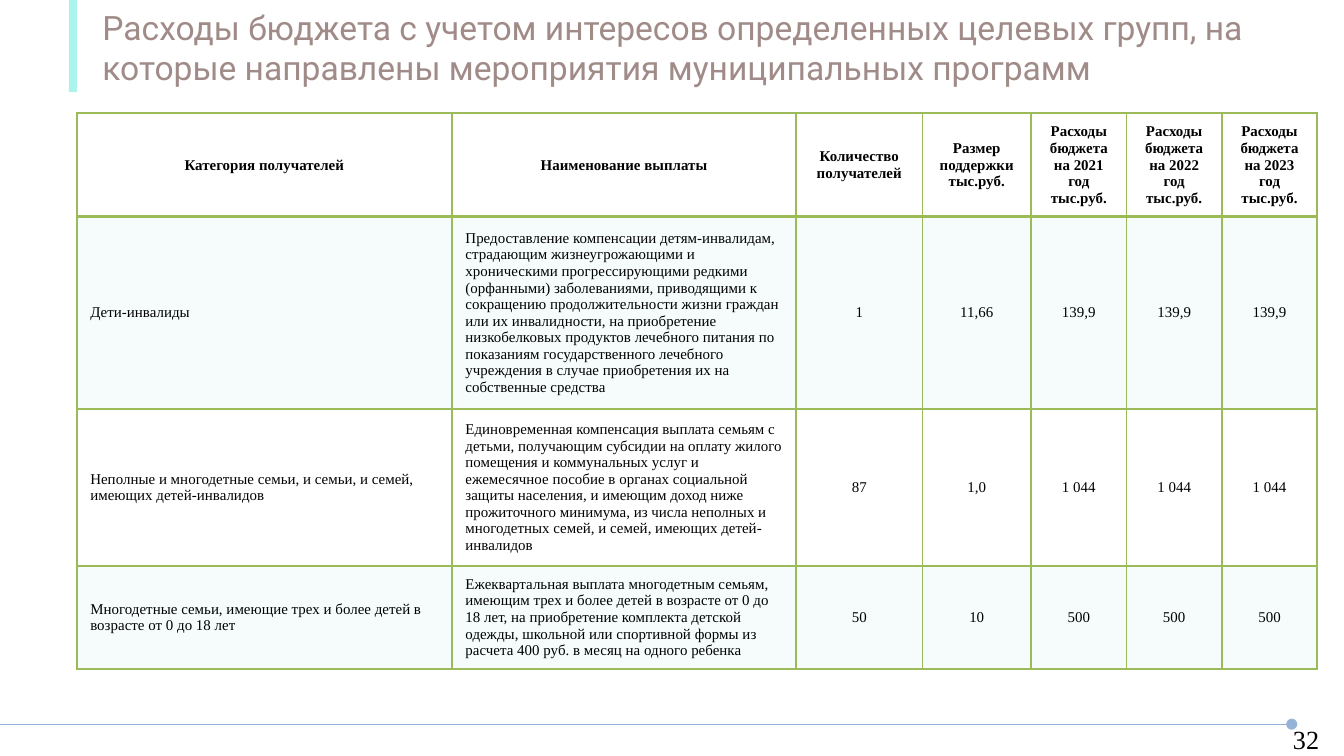
import pptx
import pptx.dml.color
import pptx.enum.shapes
import pptx.enum.text
import pptx.oxml
import pptx.oxml.ns
import pptx.util
from dataclasses import dataclass

Pt = pptx.util.Pt
Align = pptx.enum.text.PP_ALIGN
Anchor = pptx.enum.text.MSO_ANCHOR


@dataclass
class Theme:
    ink: str = "000000"
    title: str = "A08B88"
    accent: str = "ACF3EB"
    grid: str = "9BBB59"
    band: str = "D4F4F2"
    rule: str = "95B3D7"
    head_font: str = "Roboto"
    body_font: str = "Times New Roman"
    head_size: float = 18
    page_size: float = 14
    cell_size: float = 8


def color(code):
    return pptx.dml.color.RGBColor.from_string(code)


def add_xml(parent, body):
    space = pptx.oxml.ns.nsdecls("a")
    tag, rest = body.split(" ", 1)
    parent.append(pptx.oxml.parse_xml(f"<{tag} {space} {rest}"))


class Page:
    def __init__(self, deck, theme):
        self.theme = theme
        self.slide = deck.slides.add_slide(deck.slide_layouts[6])

    def fill_text(self, frame, text, font, size, tone, align, bold=False):
        frame.text = text
        for para in frame.paragraphs:
            para.alignment = align
            for run in para.runs:
                run.font.name = font
                run.font.size = Pt(size)
                run.font.bold = bold
                run.font.color.rgb = color(tone)

    def text(self, box, text, font, size, tone, align=Align.LEFT, anchor=Anchor.TOP):
        frame = self.slide.shapes.add_textbox(*map(Pt, box)).text_frame
        frame.word_wrap = True
        frame.vertical_anchor = anchor
        self.fill_text(frame, text, font, size, tone, align)
        return frame

    def bar(self, box, tone):
        kind = pptx.enum.shapes.MSO_SHAPE.RECTANGLE
        shape = self.slide.shapes.add_shape(kind, *map(Pt, box))
        shape.shadow.inherit = False
        shape.fill.solid()
        shape.fill.fore_color.rgb = color(tone)
        shape.line.fill.background()

    def line(self, start, end, tone, width):
        kind = pptx.enum.shapes.MSO_CONNECTOR.STRAIGHT
        line = self.slide.shapes.add_connector(kind, *map(Pt, start + end))
        line.line.color.rgb = color(tone)
        line.line.width = Pt(width)
        add_xml(line.line._get_or_add_ln(), 'a:tailEnd type="oval"/>')
        add_xml(line._element.spPr, "a:effectLst />")

    def border(self, cell, base):
        props = cell._tc.get_or_add_tcPr()
        for side, width in zip("LRTB", (1, 1, 1, base)):
            add_xml(props, f'a:ln{side} w="{Pt(width)}"><a:solidFill>'
                    f'<a:srgbClr val="{self.theme.grid}"/></a:solidFill></a:ln{side}>')

    def shade(self, cell, tone, alpha):
        cell.fill.solid()
        cell.fill.fore_color.rgb = color(tone)
        add_xml(cell._tc.tcPr.xpath("./a:solidFill/a:srgbClr")[0],
                f'a:alpha val="{alpha * 1000}"/>')

    def table(self, left, top, widths, heights, rows):
        look = self.theme
        box = left, top, sum(widths), sum(heights)
        table = self.slide.shapes.add_table(len(rows), len(widths), *map(Pt, box)).table
        table.first_row = table.horz_banding = False
        for col, width in zip(table.columns, widths):
            col.width = Pt(width)
        for row, height in zip(table.rows, heights):
            row.height = Pt(height)
        for r, row in enumerate(rows):
            head = r == 0
            for c, text in enumerate(row):
                cell = table.cell(r, c)
                cell.vertical_anchor = Anchor.MIDDLE
                align = Align.CENTER if head or c > 1 else Align.LEFT
                self.fill_text(cell.text_frame, text, look.body_font, look.cell_size,
                               look.ink, align, head)
                self.border(cell, 2 if head else 1)
                if r % 2:
                    self.shade(cell, look.band, 20)
                else:
                    cell.fill.background()


TITLE = ("Расходы бюджета с учетом интересов определенных целевых групп, на "
         "которые направлены мероприятия муниципальных программ")
YEARS = 2021, 2022, 2023
ROWS = [
    ["Категория получателей", "Наименование выплаты", "Количество получателей",
     "Размер поддержки тыс.руб."]
    + [f"Расходы бюджета на {year} год тыс.руб." for year in YEARS],
    ["Дети-инвалиды",
     "Предоставление компенсации детям-инвалидам, страдающим жизнеугрожающими и "
     "хроническими прогрессирующими редкими (орфанными) заболеваниями, приводящими к "
     "сокращению продолжительности жизни граждан или их инвалидности, на приобретение "
     "низкобелковых продуктов лечебного питания по показаниям государственного лечебного "
     "учреждения в случае приобретения их на собственные средства",
     "1", "11,66"] + ["139,9"] * len(YEARS),
    ["Неполные и многодетные семьи, и семьи, и семей, имеющих детей-инвалидов",
     "Единовременная компенсация выплата семьям с детьми, получающим субсидии на оплату "
     "жилого помещения и коммунальных услуг и ежемесячное пособие в органах социальной "
     "защиты населения, и имеющим доход ниже прожиточного минимума, из числа неполных и "
     "многодетных семей, и семей, имеющих детей-инвалидов",
     "87", "1,0"] + ["1 044"] * len(YEARS),
    ["Многодетные семьи, имеющие трех и более детей в возрасте от 0 до 18 лет",
     "Ежеквартальная выплата многодетным семьям, имеющим трех и более детей в возрасте "
     "от 0 до 18 лет, на приобретение комплекта детской одежды, школьной или спортивной "
     "формы из расчета 400 руб. в месяц на одного ребенка",
     "50", "10"] + ["500"] * len(YEARS),
]


def main():
    deck = pptx.Presentation()
    deck.slide_width, deck.slide_height = Pt(720), Pt(405)
    look = Theme()
    page = Page(deck, look)
    page.line((0, 388), (692, 388), look.rule, 0.75)
    page.text((683.5, 388, 32.4, 16), "32", look.body_font, look.page_size, look.ink,
              Align.CENTER, Anchor.MIDDLE)
    title = page.text((47.8, 0, 636, 51), TITLE, look.head_font, look.head_size, look.title)
    title.auto_size = pptx.enum.text.MSO_AUTO_SIZE.SHAPE_TO_FIT_TEXT
    page.bar((37, -0.6, 4.3, 50), look.accent)
    widths = [201, 184.4, 67.6, 58.3] + [51.1] * len(YEARS)
    page.table(41.2, 60.6, widths, [55.4, 102.6, 84.1, 55.2], ROWS)
    deck.save("out.pptx")


if __name__ == "__main__":
    main()
